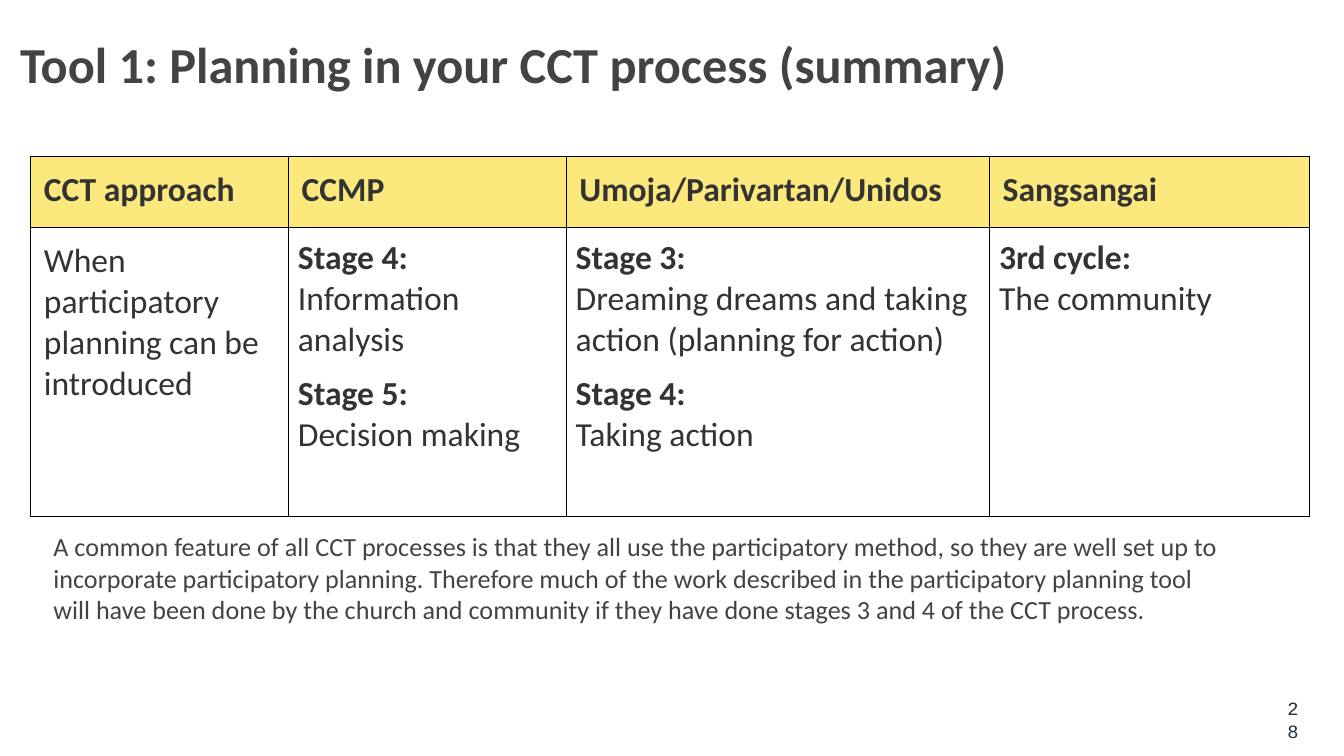
from lxml.etree import SubElement
from pptx import Presentation
from pptx.dml.color import RGBColor
from pptx.enum.text import MSO_ANCHOR, MSO_AUTO_SIZE, PP_ALIGN
from pptx.oxml.ns import qn
from pptx.util import Cm, Pt

GREY = RGBColor(0x43, 0x43, 0x43)
CHARCOAL = RGBColor(0x33, 0x33, 0x33)
NAVY = RGBColor(0x17, 0x31, 0x45)
YELLOW = RGBColor(0xFC, 0xE9, 0x7D)
WHITE = RGBColor(0xFF, 0xFF, 0xFF)
BLACK = RGBColor(0, 0, 0)

HEADINGS = ["CCT approach", "CCMP", "Umoja/Parivartan/Unidos", "Sangsangai"]
QUESTION = "When participatory planning can be introduced"
STAGES = [
    [("Stage 4: ", "Information analysis"), ("Stage 5: ", "Decision making")],
    [("Stage 3: ", "Dreaming dreams and taking action (planning for action)"),
     ("Stage 4: ", "Taking action")],
    [("3rd cycle: ", "The community")],
]
NOTE = (
    "A common feature of all CCT processes is that they all use the participatory method, "
    "so they are well set up to incorporate participatory planning. Therefore much of the "
    "work described in the participatory planning tool will have been done by the church "
    "and community if they have done stages 3 and 4 of the CCT process."
)


class SlideBuilder:
    font_name = "Calibri"
    inset = Cm(0.25)
    narrow_inset = Cm(0.18)
    border_width = Pt(0.5)

    def __init__(self, slide):
        self.slide = slide

    def style(self, paragraph, size, color, bold=None, name=None):
        font = paragraph.font
        font.name = name or self.font_name
        font.size = Pt(size)
        font.color.rgb = color
        font.bold = bold

    def set_insets(self, target, inset):
        target.margin_left = target.margin_right = inset
        target.margin_top = target.margin_bottom = inset

    def title(self, text, left, top, width, height):
        shape = self.slide.shapes.title
        shape.left, shape.top, shape.width, shape.height = left, top, width, height
        frame = shape.text_frame
        frame.auto_size = MSO_AUTO_SIZE.NONE
        frame.vertical_anchor = MSO_ANCHOR.TOP
        self.set_insets(frame, self.inset)
        frame.margin_top = Cm(0.33)
        frame.text = text
        paragraph = frame.paragraphs[0]
        paragraph.alignment = PP_ALIGN.LEFT
        self.style(paragraph, 27, GREY, bold=True)

    def text(self, text, left, top, width, height, size, color,
             name=None, alignment=PP_ALIGN.LEFT):
        frame = self.slide.shapes.add_textbox(left, top, width, height).text_frame
        frame.word_wrap = True
        self.set_insets(frame, self.inset)
        frame.text = text
        paragraph = frame.paragraphs[0]
        paragraph.alignment = alignment
        self.style(paragraph, size, color, name=name)

    def table(self, left, top, widths, heights):
        shape = self.slide.shapes.add_table(
            len(heights), len(widths), left, top, sum(widths), sum(heights))
        table = shape.table
        for column, width in zip(table.columns, widths):
            column.width = width
        for row, height in zip(table.rows, heights):
            row.height = height
        for cell in table.iter_cells():
            self.borders(cell)
        return table

    def borders(self, cell):
        properties = cell._tc.get_or_add_tcPr()
        for side in ("a:lnL", "a:lnR", "a:lnT", "a:lnB"):
            line = SubElement(properties, qn(side), w=str(self.border_width))
            fill = SubElement(line, qn("a:solidFill"))
            SubElement(fill, qn("a:srgbClr"), val=str(BLACK))

    def fill_cell(self, cell, color, inset):
        cell.fill.solid()
        cell.fill.fore_color.rgb = color
        self.set_insets(cell, inset)

    def plain_cell(self, cell, text, color, bold):
        self.fill_cell(cell, color, self.inset)
        cell.text = text
        self.style(cell.text_frame.paragraphs[0], 18, CHARCOAL, bold=bold)

    def stage_cell(self, cell, stages):
        self.fill_cell(cell, WHITE, self.narrow_inset)
        frame = cell.text_frame
        for index, (stage, activity) in enumerate(stages):
            paragraph = frame.add_paragraph() if index else frame.paragraphs[0]
            if index:
                paragraph.space_before = Pt(7)
            self.style(paragraph, 18, CHARCOAL)
            heading = paragraph.add_run()
            heading.text = stage
            heading.font.bold = True
            paragraph.add_line_break()
            detail = paragraph.add_run()
            detail.text = activity
            detail.font.bold = False


def main():
    presentation = Presentation()
    presentation.slide_width = Cm(25.4)
    presentation.slide_height = Cm(14.29)
    builder = SlideBuilder(presentation.slides.add_slide(presentation.slide_layouts[5]))

    builder.text("28", Cm(23.9), Cm(12.93), Cm(0.89), Cm(0.76), 10, NAVY,
                 name="Courier New", alignment=PP_ALIGN.RIGHT)
    builder.title("Tool 1: Planning in your CCT process (summary)",
                  Cm(0.13), Cm(0.3), Cm(25.12), Cm(1.6))

    table = builder.table(Cm(0.58), Cm(2.95),
                          [Cm(4.87), Cm(5.25), Cm(8), Cm(6.05)], [Cm(1.35), Cm(5.46)])
    for column, heading in enumerate(HEADINGS):
        builder.plain_cell(table.cell(0, column), heading, YELLOW, bold=True)
    builder.plain_cell(table.cell(1, 0), QUESTION, WHITE, bold=False)
    for column, stages in enumerate(STAGES, start=1):
        builder.stage_cell(table.cell(1, column), stages)

    builder.text(NOTE, Cm(0.76), Cm(9.78), Cm(22.76), Cm(2.34), 14, GREY)
    presentation.save("out.pptx")


if __name__ == "__main__":
    main()
